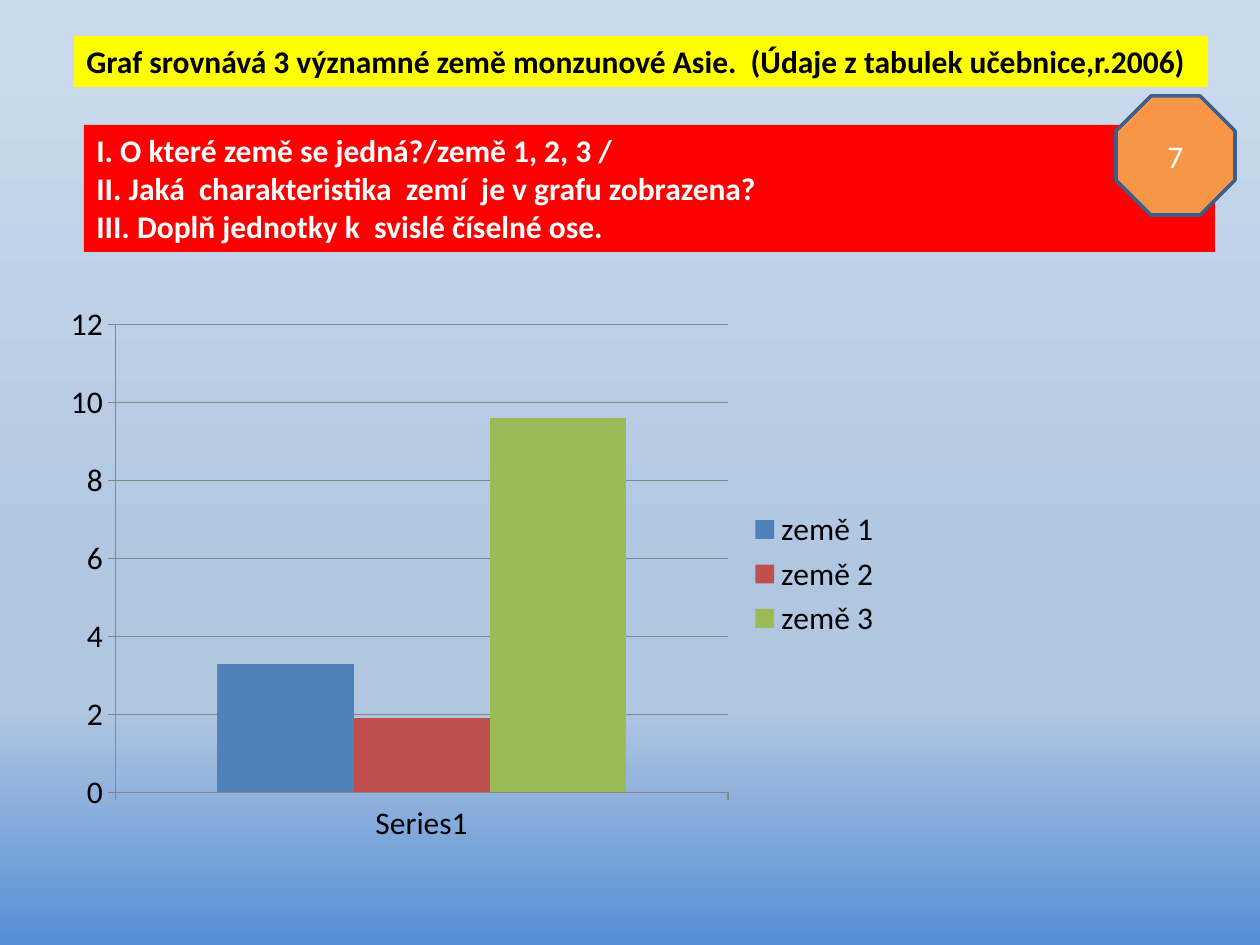
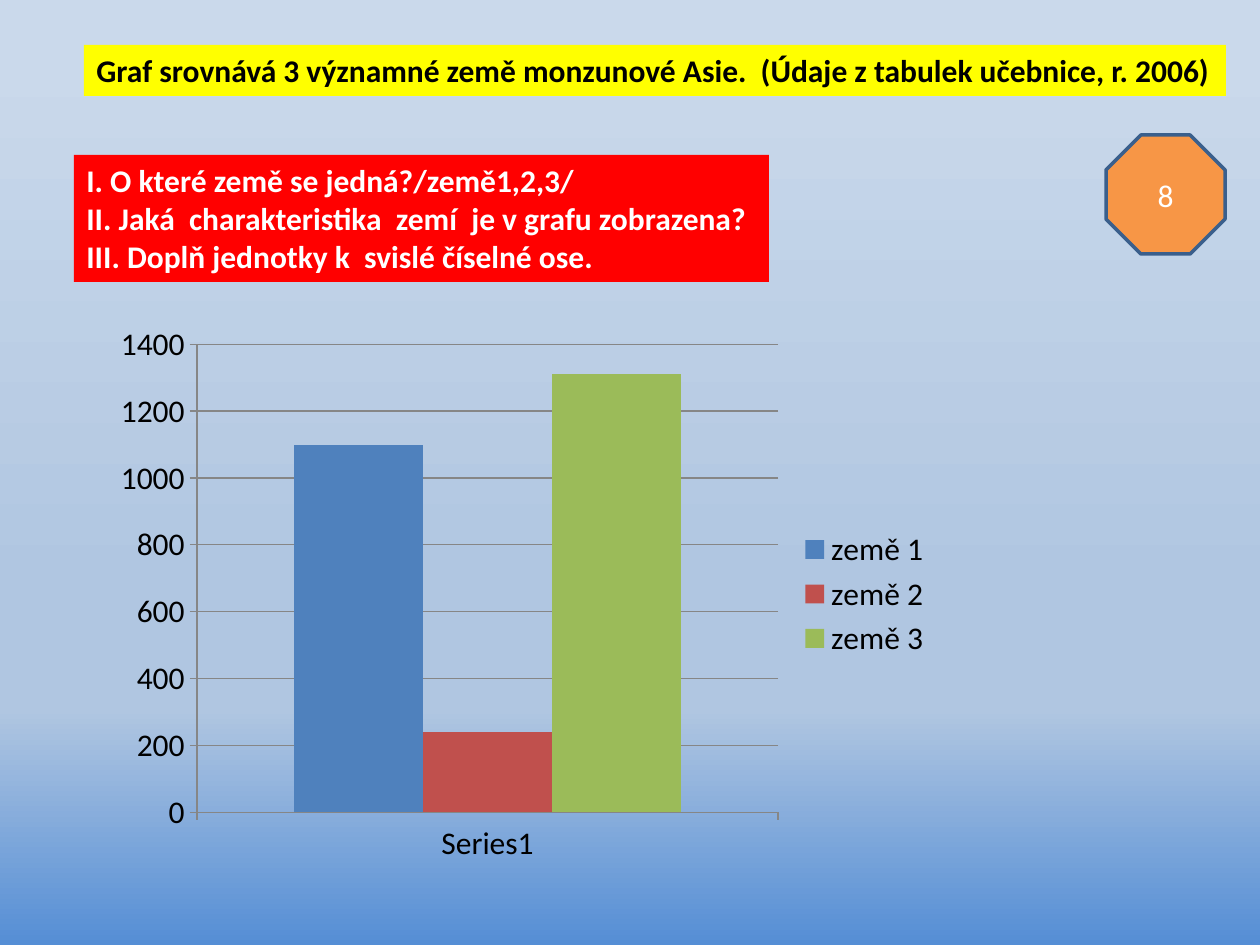
import pptx
import pptx.chart.data
import pptx.dml.color
import pptx.enum.chart
import pptx.enum.shapes
import pptx.enum.text
import pptx.oxml
import pptx.oxml.ns
import pptx.util

SCALE = 914400 / 126
FONT = "Calibri"
SIZE = pptx.util.Pt(18)
BLACK, WHITE, GREY = "000000", "FFFFFF", "868686"
YELLOW, RED, ORANGE, NAVY = "FFFF00", "FF0000", "F79646", "3A5F8C"
LANDS = {"země 1": "4F81BD", "země 2": "C0504D", "země 3": "9BBB59"}
SKY = [(6, "CAD9EB"), (62, "B0C6E1"), (75, "B0C6E1"), (100, "558ED5")]
TASKS = [
    "II. Jaká  charakteristika  zemí  je v grafu zobrazena?",
    "III. Doplň jednotky k  svislé číselné ose.",
]


def px(*sides):
    """Turn pixel lengths into EMU."""
    return [pptx.util.Emu(round(side * SCALE)) for side in sides]


def rgb(code):
    """Turn a hex string into a colour."""
    return pptx.dml.color.RGBColor.from_string(code)


def paint(fill, code):
    """Give a fill one solid colour."""
    fill.solid()
    fill.fore_color.rgb = rgb(code)


def style(font, code, bold=False):
    """Set the shared font in one colour."""
    font.name, font.size, font.bold = FONT, SIZE, bold
    font.color.rgb = rgb(code)


def write(para, text, code, bold=False):
    """Add one styled run to a paragraph."""
    run = para.add_run()
    run.text = text
    style(run.font, code, bold)


def add_sky(slide):
    """Fill the background with the vertical gradient."""
    fill = slide.background.fill
    fill.gradient()
    grad = slide.background._cSld.bg.bgPr.find(pptx.oxml.ns.qn("a:gradFill"))
    stops = "".join(
        f'<a:gs pos="{pos * 1000}"><a:srgbClr val="{code}"/></a:gs>' for pos, code in SKY
    )
    space = pptx.oxml.ns.nsdecls("a")
    for child in list(grad):
        grad.remove(child)
    grad.append(pptx.oxml.parse_xml(f"<a:gsLst {space}>{stops}</a:gsLst>"))
    grad.append(pptx.oxml.parse_xml(f'<a:lin {space} ang="5400000" scaled="0"/>'))


def add_band(slide, box, lines, back, code):
    """Add a coloured band with bold lines of text."""
    band = slide.shapes.add_textbox(*px(*box))
    paint(band.fill, back)
    frame = band.text_frame
    frame.word_wrap = True
    for index, line in enumerate(lines):
        para = frame.add_paragraph() if index else frame.paragraphs[0]
        write(para, line, code, True)


def add_badge(slide, left, top, label):
    """Add the numbered octagon."""
    kind = pptx.enum.shapes.MSO_SHAPE.OCTAGON
    badge = slide.shapes.add_shape(kind, *px(left, top, 119, 119))
    badge.shadow.inherit = False
    paint(badge.fill, ORANGE)
    badge.line.color.rgb = rgb(NAVY)
    badge.line.width = pptx.util.Pt(2)
    frame = badge.text_frame
    frame.vertical_anchor = pptx.enum.text.MSO_ANCHOR.MIDDLE
    para = frame.paragraphs[0]
    para.alignment = pptx.enum.text.PP_ALIGN.CENTER
    write(para, label, WHITE)


def set_line(line):
    """Draw a thin grey chart line."""
    line.color.rgb = rgb(GREY)
    line.width = pptx.util.Pt(0.75)


def add_graph(slide, left, top, values, peak, step):
    """Add the column chart of the three lands."""
    data = pptx.chart.data.CategoryChartData()
    data.categories = ["Series1"]
    for name, value in zip(LANDS, values):
        data.add_series(name, [value])
    kind = pptx.enum.chart.XL_CHART_TYPE.COLUMN_CLUSTERED
    chart = slide.shapes.add_chart(kind, *px(left, top, 840, 560), data).chart
    style(chart.font, BLACK)
    chart.has_title = False
    chart.has_legend = True
    chart.legend.position = pptx.enum.chart.XL_LEGEND_POSITION.RIGHT
    chart.legend.include_in_layout = False
    for axis in (chart.category_axis, chart.value_axis):
        axis.major_tick_mark = pptx.enum.chart.XL_TICK_MARK.OUTSIDE
        set_line(axis.format.line)
    scale = chart.value_axis
    scale.minimum_scale, scale.maximum_scale, scale.major_unit = 0, peak, step
    scale.has_major_gridlines = True
    set_line(scale.major_gridlines.format.line)
    plot = chart.plots[0]
    plot.gap_width = 150
    plot.vary_by_categories = False
    for series, code in zip(plot.series, LANDS.values()):
        paint(series.format.fill, code)


def add_page(deck, title, spot, first, tasks, graph, badge):
    """Add one quiz slide."""
    slide = deck.slides.add_slide(deck.slide_layouts[6])
    add_sky(slide)
    add_graph(slide, *graph)
    head = f"Graf srovnává 3 významné země monzunové Asie.  (Údaje z tabulek učebnice,{title})"
    add_band(slide, spot, [head], YELLOW, BLACK)
    add_band(slide, tasks, [f"I. O které země se jedná?/{first}/"] + TASKS, RED, WHITE)
    add_badge(slide, *badge)


def main():
    """Build and save the deck."""
    deck = pptx.Presentation()
    deck.slide_width, deck.slide_height = px(1260, 945)
    add_page(deck, "r.2006", (74, 36, 1134, 51), "země 1, 2, 3 ", (84, 125, 1131, 127),
             (54, 294, [3.3, 1.9, 9.6], 12, 2), (1116, 96, "7"))
    add_page(deck, " r. 2006", (84, 45, 1142, 51), "země1,2,3", (74, 155, 695, 127),
             (104, 314, [1100, 240, 1310], 1400, 200), (1106, 135, "8"))
    deck.save("out.pptx")


if __name__ == "__main__":
    main()
